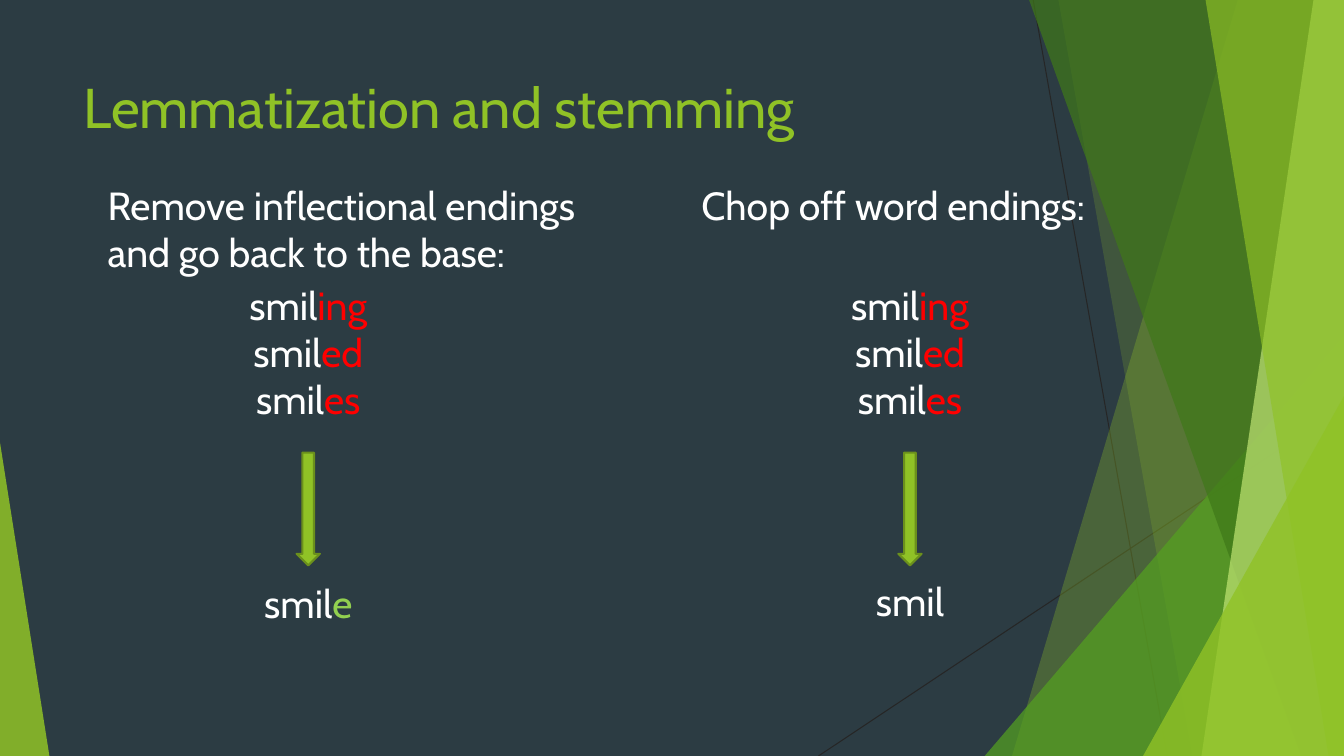
import pptx
import pptx.util
import pptx.dml.color
import pptx.enum.shapes
import pptx.enum.text
import pptx.oxml.ns
import lxml.etree

Pt = pptx.util.Pt
Shape = pptx.enum.shapes.MSO_SHAPE
Align = pptx.enum.text.PP_ALIGN
qn = pptx.oxml.ns.qn

COLORS = {
    "background": "2C3C43",
    "hairline": "262626",
    "lime": "90C226",
    "pale": "C0E474",
    "green": "54A021",
    "forest": "3F7819",
    "outline": "6B901C",
    "text": "FFFFFF",
    "ending": "FF0000",
    "restored": "92D050",
}
WIDTH, HEIGHT = 960, 540


def rgb(name):
    return pptx.dml.color.RGBColor.from_string(COLORS[name])


def write(paragraph, text, color="text", size=28, font="Cabin"):
    run = paragraph.add_run()
    run.text = text
    run.font.name = font
    run.font.size = Pt(size)
    run.font.color.rgb = rgb(color)


class Deck:
    def __init__(self):
        self.presentation = pptx.Presentation()
        self.presentation.slide_width = Pt(WIDTH)
        self.presentation.slide_height = Pt(HEIGHT)
        self.slide = self.presentation.slides.add_slide(self.presentation.slide_layouts[5])
        self.slide.background.fill.solid()
        self.slide.background.fill.fore_color.rgb = rgb("background")

    def fill(self, shape, color, opacity=100):
        shape.shadow.inherit = False
        shape.fill.solid()
        shape.fill.fore_color.rgb = rgb(color)
        shape.line.fill.background()
        if opacity < 100:
            tint = shape.fill._xPr.find(qn("a:solidFill"))[0]
            lxml.etree.SubElement(tint, qn("a:alpha"), val=str(opacity * 1000))

    def hairline(self, *ends):
        line = self.slide.shapes.add_connector(
            pptx.enum.shapes.MSO_CONNECTOR.STRAIGHT, *map(Pt, ends))
        line.line.color.rgb = rgb("hairline")
        line.line.width = Pt(0.75)
        lxml.etree.SubElement(line._element.spPr, qn("a:effectLst"))

    def shard(self, top_left, bottom_left, color, opacity):
        builder = self.slide.shapes.build_freeform(Pt(top_left), 0)
        corners = [(WIDTH, 0), (WIDTH, HEIGHT), (bottom_left, HEIGHT)]
        builder.add_line_segments([(Pt(x), Pt(y)) for x, y in corners])
        self.fill(builder.convert_to_shape(), color, opacity)

    def triangle(self, left, top, width, apex, color, opacity):
        corner = self.slide.shapes.add_shape(
            Shape.ISOSCELES_TRIANGLE, Pt(left), Pt(top), Pt(width), Pt(HEIGHT - top))
        corner.adjustments[0] = apex
        self.fill(corner, color, opacity)

    def arrow(self, center, top, width, height):
        arrow = self.slide.shapes.add_shape(
            Shape.DOWN_ARROW, Pt(center - width / 2), Pt(top), Pt(width), Pt(height))
        self.fill(arrow, "lime")
        arrow.line.color.rgb = rgb("outline")
        arrow.line.width = Pt(1.5)

    def title(self, text, left, top, width, height):
        title = self.slide.shapes.title
        title.left, title.top, title.width, title.height = map(Pt, (left, top, width, height))
        frame = title.text_frame
        frame.auto_size = pptx.enum.text.MSO_AUTO_SIZE.NONE
        frame.vertical_anchor = pptx.enum.text.MSO_ANCHOR.TOP
        frame.paragraphs[0].alignment = Align.LEFT
        write(frame.paragraphs[0], text, color="lime", size=40)
        self.slide.shapes._spTree.append(title._element)

    def text(self, lines, left, top, width, height, align=Align.LEFT):
        box = self.slide.shapes.add_textbox(Pt(left), Pt(top), Pt(width), Pt(height))
        frame = box.text_frame
        frame.word_wrap = True
        for index, line in enumerate(lines):
            paragraph = frame.add_paragraph() if index else frame.paragraphs[0]
            paragraph.alignment = align
            for word_part, color in line:
                write(paragraph, word_part, color=color)


def main():
    deck = Deck()
    deck.hairline(738, 0, 833.8, HEIGHT)
    deck.hairline(WIDTH, 290.2, 584.6, HEIGHT)
    deck.shard(884.2, 722.9, "lime", 30)
    deck.shard(756, 851.8, "lime", 20)
    deck.triangle(703.4, 239.8, 256.6, 1, "green", 72)
    deck.shard(735.1, 929.5, "forest", 70)
    deck.shard(938.2, 858.2, "pale", 70)
    deck.shard(861.1, 949, "lime", 65)
    deck.triangle(816.5, 283, 143.5, 1, "lime", 80)
    deck.triangle(0, 316.1, 35.3, 0, "lime", 85)

    deck.title("Lemmatization and stemming", 52.6, 48.2, 838.8, 64.1)

    inflections = [[("smil", "text"), (ending, "ending")] for ending in ("ing", "ed", "es")]
    methods = [
        ("Remove inflectional endings and go back to the base:", 69.8, 220.2,
         [("smil", "text"), ("e", "restored")], 410.4),
        ("Chop off word endings:", 493.9, 650, [("smil", "text")], 409),
    ]
    word_width = 109.4
    for heading, left, center, result, result_top in methods:
        word_left = center - word_width / 2
        deck.text([[(heading, "text")]], left, 126, 378, 75)
        deck.text(inflections, word_left, 197.3, word_width, 109, Align.CENTER)
        deck.arrow(center, 323.3, 16.6, 80.6)
        deck.text([result], word_left, result_top, word_width, 41, Align.CENTER)

    deck.presentation.save("out.pptx")


if __name__ == "__main__":
    main()
